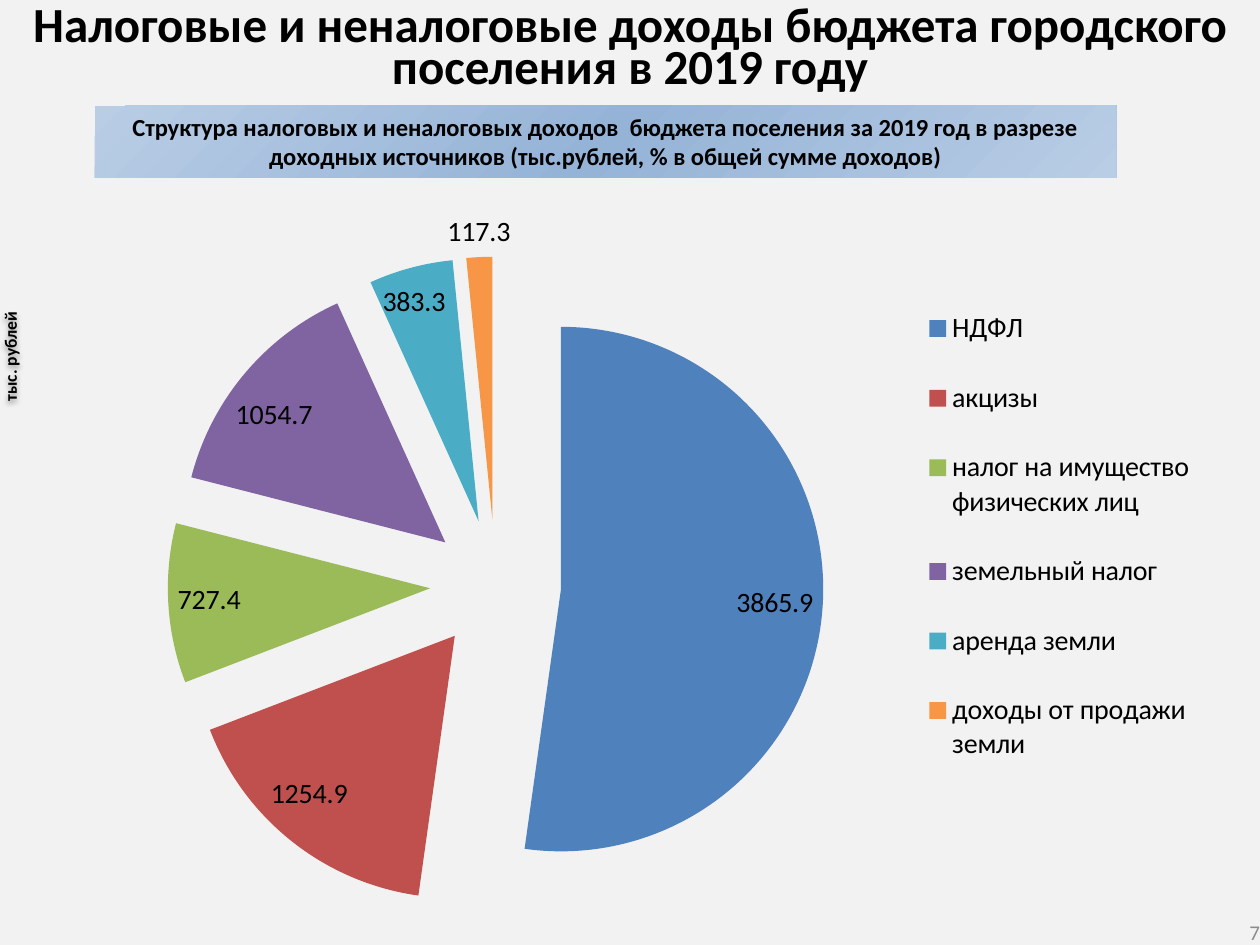
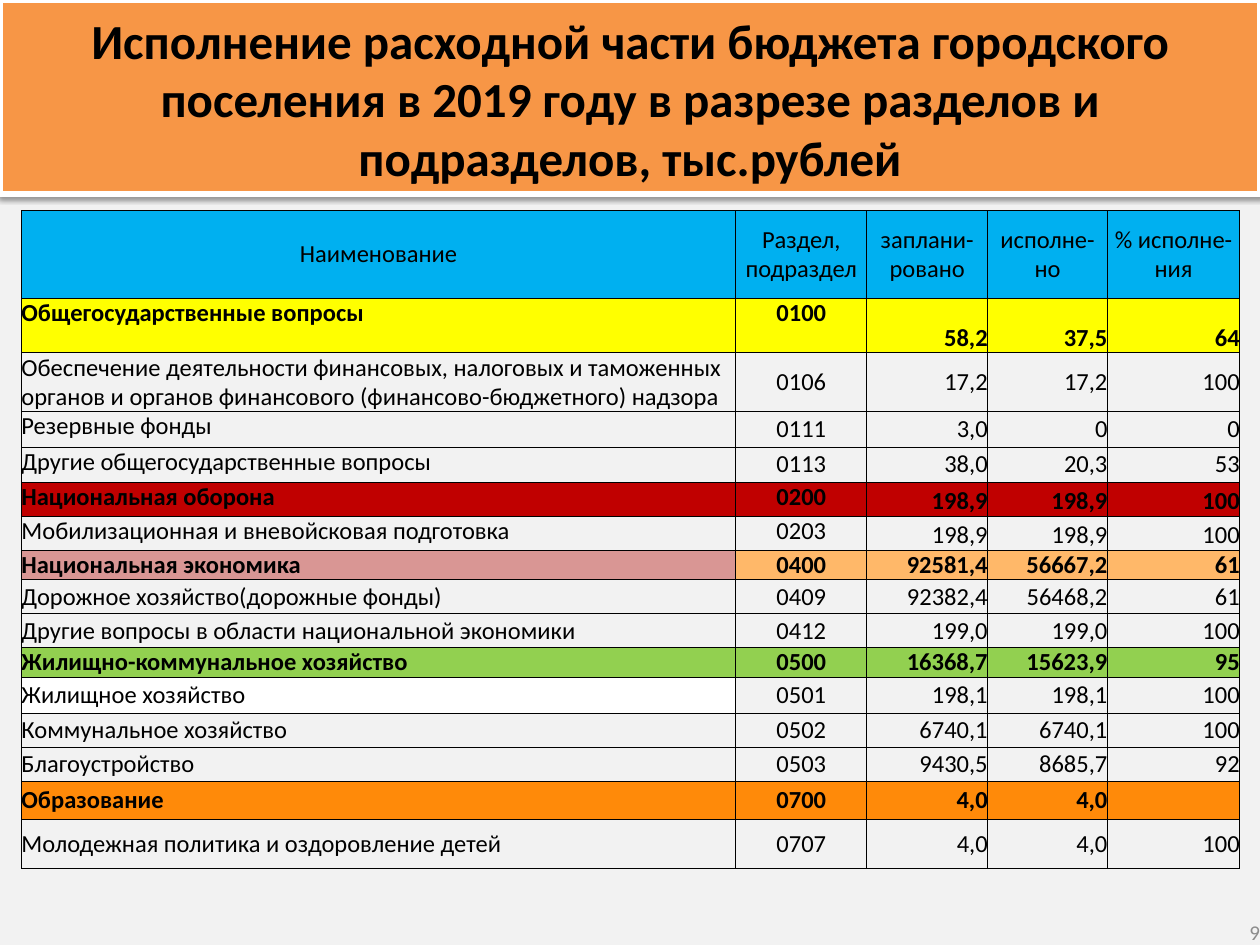
from dataclasses import dataclass
from typing import NamedTuple, Optional

from lxml.etree import SubElement
from pptx import Presentation
from pptx.chart.data import CategoryChartData
from pptx.dml.color import RGBColor
from pptx.enum.chart import XL_CHART_TYPE as ChartType
from pptx.enum.chart import XL_LABEL_POSITION as LabelPosition
from pptx.enum.chart import XL_LEGEND_POSITION as LegendPosition
from pptx.enum.shapes import MSO_SHAPE as ShapeType
from pptx.enum.text import MSO_ANCHOR as Anchor
from pptx.enum.text import PP_ALIGN as Align
from pptx.oxml import parse_xml
from pptx.oxml.ns import nsdecls, qn
from pptx.util import Inches, Pt


@dataclass(frozen=True)
class Theme:
    font: str = "Calibri"
    background: str = "F2F2F2"
    text: str = "000000"
    muted: str = "8C8C8C"
    white: str = "FFFFFF"
    orange: str = "F79646"
    banner_edge: str = "B9CDE5"
    banner_middle: str = "95B3D7"
    header: str = "00B0F0"
    title_size: int = 28
    chart_size: int = 16
    body_size: int = 14
    number_size: int = 12
    unit_size: int = 10


THEME = Theme()
TITLE_INSETS = (0.1, 0.08, 0.1, 0.05)
BOX_INSETS = (0.1, 0.05, 0.1, 0.05)
NO_INSETS = (0, 0, 0, 0)


class Box(NamedTuple):
    left: float
    top: float
    width: float
    height: float

    def inches(self) -> list:
        return [Inches(length) for length in self]


class Income(NamedTuple):
    source: str
    amount: float
    color: str


INCOMES = [
    Income("НДФЛ", 3865.9, "4F81BD"),
    Income("акцизы", 1254.9, "C0504D"),
    Income("налог на имущество физических лиц", 727.4, "9BBB59"),
    Income("земельный налог", 1054.7, "8064A2"),
    Income("аренда земли", 383.3, "4BACC6"),
    Income("доходы от продажи земли", 117.3, THEME.orange),
]


class Anchors(NamedTuple):
    name: Anchor
    code: Anchor
    amounts: Anchor


MIDDLE = Anchors(Anchor.MIDDLE, Anchor.MIDDLE, Anchor.MIDDLE)
NAME_ON_TOP = Anchors(Anchor.TOP, Anchor.MIDDLE, Anchor.MIDDLE)
AMOUNTS_BELOW = Anchors(Anchor.TOP, Anchor.TOP, Anchor.BOTTOM)


class Expense(NamedTuple):
    """A budget line; a section is bold, and name_fill overrides fill in the first cell."""
    name: str
    code: str
    planned: str
    spent: str
    percent: str
    height: float
    anchors: Anchors = MIDDLE
    section: bool = False
    fill: Optional[str] = None
    name_fill: Optional[str] = None


HEADINGS = ("Наименование", "Раздел, подраздел", "заплани-ровано", "исполне-\nно", "% исполне-ния")
HEADING_HEIGHT = 0.7
COLUMN_WIDTHS = (5.67, 1.04, 0.96, 0.95, 1.05)
EXPENSES = [
    Expense("Общегосударственные вопросы", "0100", "58,2", "37,5", "64", 0.43,
            AMOUNTS_BELOW, True, "FFFF00"),
    Expense("Обеспечение деятельности финансовых, налоговых и таможенных органов "
            "и органов финансового (финансово-бюджетного) надзора",
            "0106", "17,2", "17,2", "100", 0.46, NAME_ON_TOP),
    Expense("Резервные фонды", "0111", "3,0", "0", "0", 0.28, NAME_ON_TOP),
    Expense("Другие общегосударственные вопросы", "0113", "38,0", "20,3", "53", 0.28, NAME_ON_TOP),
    Expense("Национальная оборона", "0200", "198,9", "198,9", "100", 0.27,
            AMOUNTS_BELOW, True, "C00000"),
    Expense("Мобилизационная и вневойсковая подготовка", "0203", "198,9", "198,9", "100", 0.27,
            AMOUNTS_BELOW),
    Expense("Национальная экономика", "0400", "92581,4", "56667,2", "61", 0.23,
            section=True, fill="FFB869", name_fill="D99694"),
    Expense("Дорожное хозяйство(дорожные фонды)", "0409", "92382,4", "56468,2", "61", 0.27),
    Expense("Другие вопросы в области национальной экономики", "0412", "199,0", "199,0", "100", 0.27),
    Expense("Жилищно-коммунальное хозяйство", "0500", "16368,7", "15623,9", "95", 0.23,
            section=True, fill="92D050"),
    Expense("Жилищное хозяйство", "0501", "198,1", "198,1", "100", 0.29, name_fill=THEME.white),
    Expense("Коммунальное хозяйство", "0502", "6740,1", "6740,1", "100", 0.27),
    Expense("Благоустройство", "0503", "9430,5", "8685,7", "92", 0.27),
    Expense("Образование", "0700", "4,0", "4,0", "", 0.28, section=True, fill="FF8A09"),
    Expense("Молодежная политика и оздоровление детей", "0707", "4,0", "4,0", "100", 0.39),
]


def rgb(color: str) -> RGBColor:
    return RGBColor.from_string(color)


def write(frame, text: str, *, size: int = THEME.body_size, bold: bool = False,
          color: str = THEME.text, align: Align = Align.CENTER,
          line_spacing: Optional[int] = None) -> None:
    paragraph = frame.paragraphs[0]
    paragraph.text = text
    paragraph.alignment = align
    if line_spacing:
        paragraph.line_spacing = Pt(line_spacing)
    for run in paragraph.runs or [paragraph.add_run()]:
        run.font.name = THEME.font
        run.font.size = Pt(size)
        run.font.bold = bold
        run.font.color.rgb = rgb(color)


def set_frame(shape, insets: tuple, anchor: Anchor = Anchor.TOP):
    frame = shape.text_frame
    frame.word_wrap = True
    frame.vertical_anchor = anchor
    frame.margin_left, frame.margin_top, frame.margin_right, frame.margin_bottom = map(Inches, insets)
    return frame


def add_text(slide, box: Box, text: str, *, insets: tuple = NO_INSETS,
             anchor: Anchor = Anchor.TOP, **text_format):
    shape = slide.shapes.add_textbox(*box.inches())
    write(set_frame(shape, insets, anchor), text, **text_format)
    return shape


def add_panel(slide, box: Box, text: str, *, insets: tuple, **text_format):
    shape = slide.shapes.add_shape(ShapeType.RECTANGLE, *box.inches())
    shape.shadow.inherit = False
    shape.line.fill.background()
    write(set_frame(shape, insets), text, bold=True, **text_format)
    return shape


def add_shadow(shape) -> None:
    shape.shadow.inherit = False
    effects = shape._element.spPr.find(qn("a:effectLst"))
    shadow = SubElement(effects, qn("a:outerShdw"), blurRad=str(Pt(3.1)), dist=str(Pt(1.6)),
                        dir="5400000", rotWithShape="0")
    color = SubElement(shadow, qn("a:srgbClr"), val=THEME.text)
    SubElement(color, qn("a:alpha"), val="38000")


def fill_radial(shape, edge: str, middle: str) -> None:
    shape.fill.gradient()
    gradient = shape._element.spPr.find(qn("a:gradFill"))
    stops = "".join(f'<a:gs pos="{position}"><a:srgbClr val="{color}"/></a:gs>'
                    for position, color in ((0, edge), (50000, middle), (100000, edge)))
    radial = parse_xml(
        f'<a:gradFill {nsdecls("a")}><a:gsLst>{stops}</a:gsLst>'
        '<a:path path="circle"><a:fillToRect l="100000" t="100000"/></a:path></a:gradFill>')
    gradient.getparent().replace(gradient, radial)


def place(parent, box: Box) -> None:
    """Fix a chart part at a box given in fractions of the chart."""
    old = parent.find(qn("c:layout"))
    if old is not None:
        parent.remove(old)
    target = '<c:layoutTarget val="inner"/>' if parent.tag == qn("c:plotArea") else ""
    sizes = "".join(f'<c:{key} val="{value}"/>' for key, value in zip("xywh", box))
    layout = parse_xml(
        f'<c:layout {nsdecls("c")}><c:manualLayout>{target}<c:xMode val="edge"/>'
        f'<c:yMode val="edge"/>{sizes}</c:manualLayout></c:layout>')
    if target:
        parent.insert(0, layout)
    else:
        parent.find(qn("c:legendPos")).addnext(layout)


def style_chart_font(font) -> None:
    font.name = THEME.font
    font.size = Pt(THEME.chart_size)
    font.color.rgb = rgb(THEME.text)


def add_income_pie(slide, box: Box) -> None:
    data = CategoryChartData(number_format="0.0")
    data.categories = [income.source for income in INCOMES]
    data.add_series("Series 1", [income.amount for income in INCOMES])
    chart = slide.shapes.add_chart(ChartType.PIE, *box.inches(), data).chart
    chart.has_title = False
    style_chart_font(chart.font)
    chart.has_legend = True
    chart.legend.position = LegendPosition.RIGHT
    chart.legend.include_in_layout = False
    style_chart_font(chart.legend.font)
    place(chart.legend._element, Box(0.74, 0.11, 0.25, 0.71))
    plot = chart.plots[0]
    place(plot._element.getparent(), Box(0.09, 0.08, 0.57, 0.9))
    plot.vary_by_categories = True
    series = plot.series[0]
    for index, income in enumerate(INCOMES):
        fill = series.points[index].format.fill
        fill.solid()
        fill.fore_color.rgb = rgb(income.color)
    slices = series._element.findall(qn("c:dPt"))
    for successor in [slices[0], *(item.find(qn("c:spPr")) for item in slices)]:
        successor.addprevious(parse_xml(f'<c:explosion {nsdecls("c")} val="25"/>'))
    labels = series.data_labels
    labels.show_value = True
    labels.show_percentage = False
    labels.number_format = "0.0"
    labels.number_format_is_linked = False
    labels.position = LabelPosition.BEST_FIT
    style_chart_font(labels.font)


def draw_borders(cell) -> None:
    properties = cell._tc.get_or_add_tcPr()
    for index, side in enumerate("LRTB"):
        properties.insert(index, parse_xml(
            f'<a:ln{side} {nsdecls("a")} w="{Pt(0.5)}"><a:solidFill>'
            f'<a:srgbClr val="{THEME.text}"/></a:solidFill></a:ln{side}>'))


def fill_cell(cell, text: str, fill: Optional[str], anchor: Anchor, **text_format) -> None:
    cell.margin_left = cell.margin_top = cell.margin_right = cell.margin_bottom = 0
    cell.vertical_anchor = anchor
    if fill:
        cell.fill.solid()
        cell.fill.fore_color.rgb = rgb(fill)
    else:
        cell.fill.background()
    draw_borders(cell)
    write(cell.text_frame, text, **text_format)


def add_expense_table(slide, box: Box) -> None:
    table = slide.shapes.add_table(len(EXPENSES) + 1, len(HEADINGS), *box.inches()).table
    table.first_row = table.horz_banding = False
    for column, width in zip(table.columns, COLUMN_WIDTHS):
        column.width = Inches(width)
    heights = [HEADING_HEIGHT, *(expense.height for expense in EXPENSES)]
    for row, height in zip(table.rows, heights):
        row.height = Inches(height)
    for index, heading in enumerate(HEADINGS):
        fill_cell(table.cell(0, index), heading, THEME.header, Anchor.MIDDLE)
    aligns = (Align.LEFT, Align.CENTER, Align.RIGHT, Align.RIGHT, Align.RIGHT)
    for row_index, expense in enumerate(EXPENSES, start=1):
        for index, (text, align) in enumerate(zip(expense[:5], aligns)):
            fill = expense.name_fill if index == 0 and expense.name_fill else expense.fill
            fill_cell(table.cell(row_index, index), text, fill, expense.anchors[min(index, 2)],
                      align=align, bold=expense.section)


def add_slide(presentation, number: int):
    slide = presentation.slides.add_slide(presentation.slide_layouts[6])
    slide.background.fill.solid()
    slide.background.fill.fore_color.rgb = rgb(THEME.background)
    add_text(slide, Box(7.67, 7.29, 2.33, 0.21), str(number), anchor=Anchor.MIDDLE,
             size=THEME.number_size, color=THEME.muted, align=Align.RIGHT)
    return slide


def build_income_slide(presentation) -> None:
    slide = add_slide(presentation, 7)
    add_text(slide, Box(0, 0, 10, 0.8),
             "Налоговые и неналоговые доходы бюджета городского поселения в 2019 году",
             insets=TITLE_INSETS, size=THEME.title_size, bold=True, line_spacing=24)
    unit = add_text(slide, Box(-0.71, 2.73, 1.61, 0.2), "тыс. рублей",
                    size=THEME.unit_size, bold=True)
    unit.rotation = 270
    add_shadow(unit)
    banner = add_panel(slide, Box(0.75, 0.84, 8.11, 0.57),
                       "Структура налоговых и неналоговых доходов  бюджета поселения за 2019 год "
                       "в разрезе доходных источников (тыс.рублей, % в общей сумме доходов)",
                       insets=BOX_INSETS)
    fill_radial(banner, THEME.banner_edge, THEME.banner_middle)
    add_income_pie(slide, Box(0.51, 1.55, 9.13, 5.83))


def build_expense_slide(presentation) -> None:
    slide = add_slide(presentation, 9)
    title = add_panel(slide, Box(0, 0, 10, 1.54),
                      "Исполнение расходной части бюджета городского поселения в 2019 году "
                      "в разрезе разделов и подразделов, тыс.рублей",
                      insets=TITLE_INSETS, size=THEME.title_size)
    title.fill.solid()
    title.fill.fore_color.rgb = rgb(THEME.orange)
    title.line.color.rgb = rgb(THEME.white)
    title.line.width = Pt(3)
    add_shadow(title)
    add_expense_table(slide, Box(0.17, 1.67, 9.66, 5.23))


def main() -> None:
    presentation = Presentation()
    presentation.slide_width, presentation.slide_height = Inches(10), Inches(7.5)
    build_income_slide(presentation)
    build_expense_slide(presentation)
    presentation.save("out.pptx")


if __name__ == "__main__":
    main()
